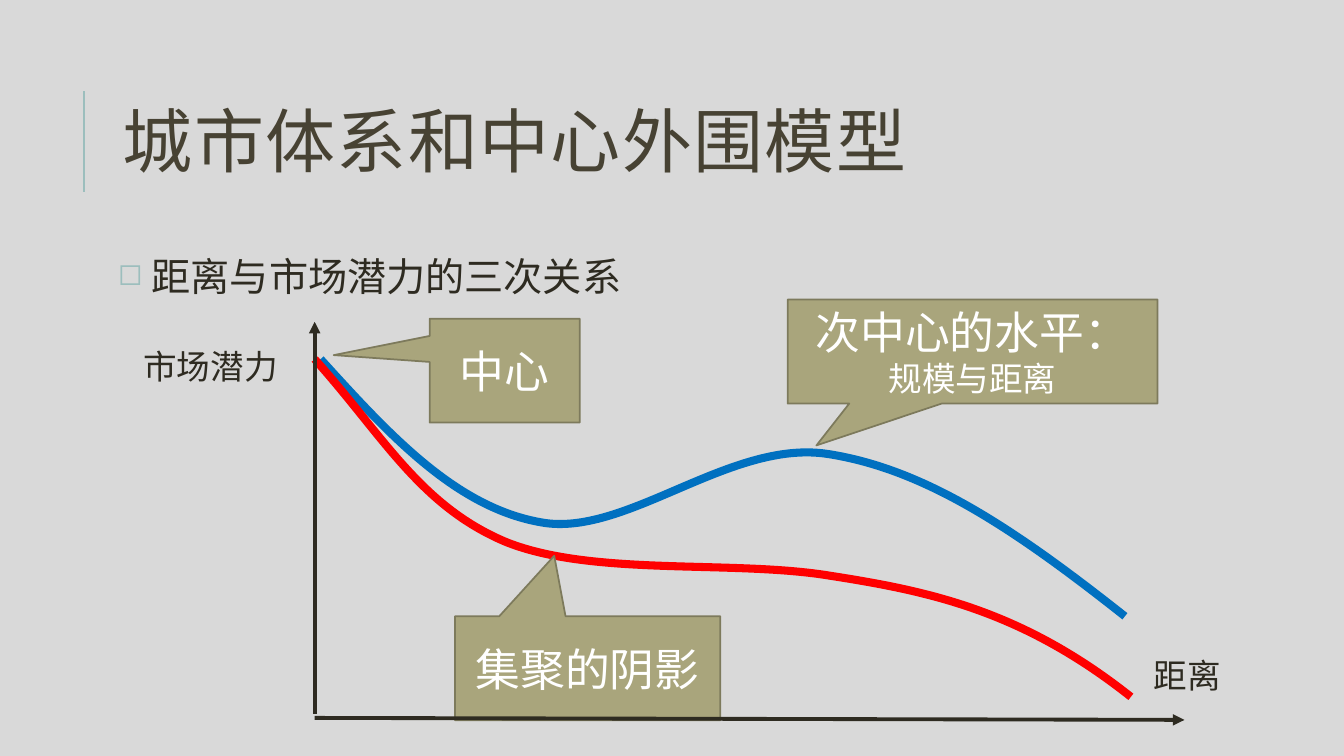
from dataclasses import dataclass

from lxml import etree
from pptx import Presentation
from pptx.dml.color import RGBColor
from pptx.enum.shapes import MSO_CONNECTOR, MSO_SHAPE
from pptx.enum.text import MSO_ANCHOR, MSO_AUTO_SIZE, PP_ALIGN
from pptx.oxml.ns import qn
from pptx.util import Cm, Pt

STRAIGHT = MSO_CONNECTOR.STRAIGHT
CALLOUT = MSO_SHAPE.RECTANGULAR_CALLOUT
MIDDLE = MSO_ANCHOR.MIDDLE
TOP = MSO_ANCHOR.TOP
LEFT = PP_ALIGN.LEFT
CENTER = PP_ALIGN.CENTER
NO_AUTOFIT = MSO_AUTO_SIZE.NONE


@dataclass(frozen=True)
class Theme:
    """Colours, font and type sizes of the slide."""
    font: str = "Calibri"
    background: str = "D9D9D9"
    accent: str = "9CBEBD"
    title: str = "474233"
    ink: str = "2E2B21"
    callout: str = "A9A57C"
    callout_edge: str = "7D7A5C"
    white: str = "FFFFFF"
    with_subcentre: str = "0070C0"
    shadowed: str = "FF0000"
    title_size: int = 50
    body_size: int = 28
    callout_size: int = 32
    label_size: int = 24


THEME = Theme()

SUBCENTRE_CURVE = [
    (0.15, 0.94), (1.9, 2.87), (3.56, 4.67), (5.69, 5.05), (7.82, 5.46),
    (10.46, 2.95), (12.93, 3.33), (15.39, 3.71), (17.65, 5.23), (20.42, 7.42),
]
SHADOW_CURVE = [
    (0, 0.94), (1.73, 2.87), (2.64, 4.62), (4.8, 5.54), (6.99, 6.43),
    (10.54, 5.99), (13, 6.4), (15.44, 6.78), (17.81, 7.26), (20.57, 9.45),
]
CALLOUTS = [
    (2.9, -0.08, 3.78, (-1.14, -0.149), [("中心", THEME.callout_size)]),
    (11.92, -0.56, 9.32, (-0.422, 0.903),
     [("次中心的水平：", THEME.callout_size), ("规模与距离", THEME.label_size)]),
    (3.54, 7.42, 6.68, (-0.126, -1.082), [("集聚的阴影", THEME.callout_size)]),
]


def rgb(value):
    """Turn a hexadecimal string into a colour."""
    return RGBColor.from_string(value)


def add_run(paragraph, text, size, color):
    """Append one formatted run to a paragraph."""
    run = paragraph.add_run()
    run.text = text
    run.font.name = THEME.font
    run.font.size = Pt(size)
    run.font.color.rgb = rgb(color)
    return run


def add_line(slide, start, end, color, width, arrow=False):
    """Draw a straight line between two points in centimetres."""
    points = [Cm(value) for value in (*start, *end)]
    connector = slide.shapes.add_connector(STRAIGHT, *points)
    connector.line.color.rgb = rgb(color)
    connector.line.width = Pt(width)
    if arrow:
        outline = connector.line._get_or_add_ln()
        etree.SubElement(outline, qn("a:tailEnd"), type="triangle")
    etree.SubElement(connector._element.spPr, qn("a:effectLst"))


def add_title(slide, left, top, width, height):
    """Format the title placeholder and draw the rule beside it."""
    title = slide.shapes.title
    title.left, title.top = Cm(left), Cm(top)
    title.width, title.height = Cm(width), Cm(height)
    frame = title.text_frame
    frame.auto_size = NO_AUTOFIT
    frame.vertical_anchor = MIDDLE
    paragraph = frame.paragraphs[0]
    paragraph.alignment = LEFT
    paragraph.line_spacing = 0.8
    run = add_run(paragraph, "城市体系和中心外围模型", THEME.title_size, THEME.title)
    run.font._element.set("spc", "100")
    rule = left - 0.73
    add_line(slide, (rule, top + 3.2), (rule, top + 0.66), THEME.accent, 1.5)


def add_body(slide, left, top, width, height):
    """Write the bulleted statement."""
    box = slide.shapes.add_textbox(Cm(left), Cm(top), Cm(width), Cm(height))
    frame = box.text_frame
    frame.word_wrap = True
    frame.vertical_anchor = TOP
    frame.margin_left = frame.margin_right = Cm(0.13)
    frame.margin_top = frame.margin_bottom = Cm(0.13)
    paragraph = frame.paragraphs[0]
    paragraph.line_spacing = 0.9
    paragraph.space_before = Pt(12)
    paragraph.space_after = Pt(2)
    properties = paragraph._p.get_or_add_pPr()
    properties.set("marL", str(Cm(0.25)))
    properties.set("indent", str(-Cm(0.25)))
    bullet_color = etree.SubElement(properties, qn("a:buClr"))
    etree.SubElement(bullet_color, qn("a:srgbClr"), val=THEME.accent)
    etree.SubElement(properties, qn("a:buSzPct"), val="77000")
    etree.SubElement(properties, qn("a:buChar"), char="◻")
    add_run(paragraph, " 距离与市场潜力的三次关系", THEME.body_size, THEME.ink)


def add_curve(slide, left, top, controls, color):
    """Draw an open chain of cubic Bézier segments through its control points."""
    points = [(Cm(left + x), Cm(top + y)) for x, y in controls]
    builder = slide.shapes.build_freeform(*points[0])
    builder.add_line_segments(points[1:], close=False)
    curve = builder.convert_to_shape()
    segments = list(curve._element.iter(qn("a:lnTo")))
    for first in range(0, len(segments), 3):
        trio = segments[first:first + 3]
        bezier = etree.Element(qn("a:cubicBezTo"))
        trio[0].addprevious(bezier)
        for segment in trio:
            bezier.append(segment[0])
            segment.getparent().remove(segment)
    curve.shadow.inherit = False
    curve.fill.background()
    curve.line.color.rgb = rgb(color)
    curve.line.width = Pt(5.75)


def add_callout(slide, left, top, width, height, pointer, lines):
    """Draw a callout whose pointer is given as shares of its size."""
    callout = slide.shapes.add_shape(CALLOUT, Cm(left), Cm(top), Cm(width), Cm(height))
    callout.adjustments[0], callout.adjustments[1] = pointer
    callout.shadow.inherit = False
    callout.fill.solid()
    callout.fill.fore_color.rgb = rgb(THEME.callout)
    callout.line.color.rgb = rgb(THEME.callout_edge)
    callout.line.width = Pt(1.25)
    frame = callout.text_frame
    frame.word_wrap = True
    frame.vertical_anchor = MIDDLE
    for index, (text, size) in enumerate(lines):
        paragraph = frame.add_paragraph() if index else frame.paragraphs[0]
        paragraph.alignment = CENTER
        add_run(paragraph, text, size, THEME.white)


def add_label(slide, left, top, text):
    """Write the name of an axis."""
    box = slide.shapes.add_textbox(Cm(left), Cm(top), Cm(4.39), Cm(1.27))
    box.text_frame.word_wrap = True
    add_run(box.text_frame.paragraphs[0], text, THEME.label_size, THEME.ink)


def add_diagram(slide, left, top, width, height):
    """Draw curves, callouts and axes inside the given box."""
    add_curve(slide, left, top, SUBCENTRE_CURVE, THEME.with_subcentre)
    add_curve(slide, left, top, SHADOW_CURVE, THEME.shadowed)
    for x, y, callout_width, pointer, lines in CALLOUTS:
        add_callout(slide, left + x, top + y, callout_width, 2.62, pointer, lines)
    bottom = top + height
    add_line(slide, (left, bottom - 0.15), (left, top), THEME.ink, 2.75, True)
    add_line(slide, (left, bottom - 0.05), (left + width, bottom), THEME.ink, 2.75, True)
    add_label(slide, left - 4.57, top + 0.48, "市场潜力")
    add_label(slide, left + width - 1.02, bottom - 1.75, "距离")


def main():
    """Build and save the presentation."""
    presentation = Presentation()
    presentation.slide_width, presentation.slide_height = Cm(33.87), Cm(19.05)
    slide = presentation.slides.add_slide(presentation.slide_layouts[5])
    slide.background.fill.solid()
    slide.background.fill.fore_color.rgb = rgb(THEME.background)
    add_title(slide, 2.84, 1.63, 27, 4.17)
    add_body(slide, 2.84, 6.35, 27, 11.18)
    add_diagram(slide, 7.93, 8.11, 21.92, 10.03)
    presentation.save("out.pptx")


if __name__ == "__main__":
    main()
